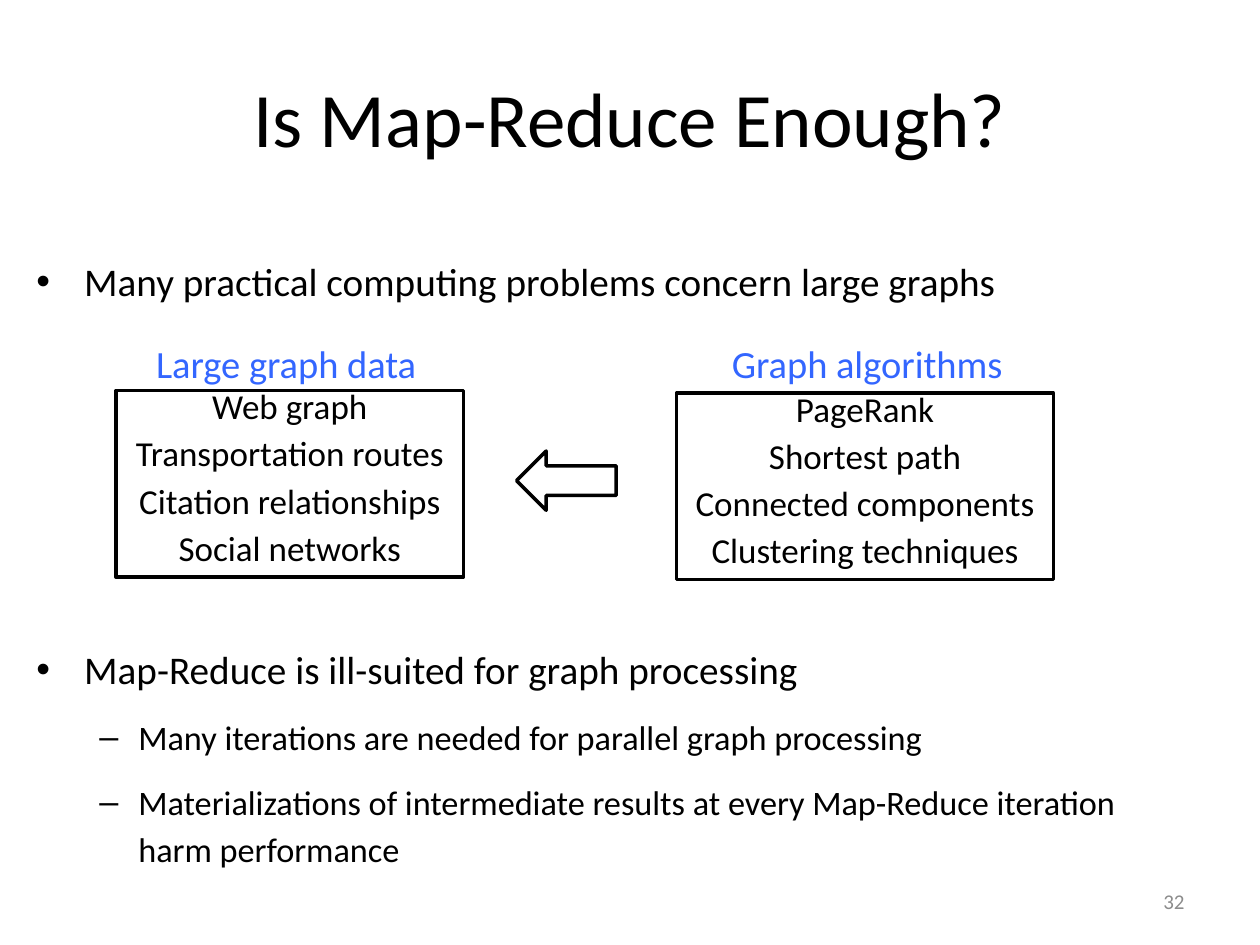
from lxml import etree
from pptx import Presentation
from pptx.dml.color import RGBColor
from pptx.enum.shapes import MSO_SHAPE
from pptx.enum.text import MSO_ANCHOR, PP_ALIGN
from pptx.oxml.ns import qn
from pptx.util import Inches, Pt

RECT, LEFT_ARROW = MSO_SHAPE.RECTANGLE, MSO_SHAPE.LEFT_ARROW
TOP, MIDDLE = MSO_ANCHOR.TOP, MSO_ANCHOR.MIDDLE
LEFT, CENTER, RIGHT = PP_ALIGN.LEFT, PP_ALIGN.CENTER, PP_ALIGN.RIGHT
TITLE_ONLY = 5
FONT = "Calibri"
BLACK, WHITE, BLUE, GRAY = "000000", "FFFFFF", "3366FF", "8C8C8C"


def rgb(value):
    return RGBColor.from_string(value)


def format_paragraph(p, size, color=BLACK, align=LEFT, line=None):
    p.alignment = align
    if line:
        p.line_spacing = Pt(line)
        p.space_before = p.space_after = Pt(5)
    for r in p.runs:
        r.font.name = FONT
        r.font.size = Pt(size)
        r.font.color.rgb = rgb(color)


def set_bullet(p, char, margin, hanging):
    pPr = p._p.get_or_add_pPr()
    pPr.set("marL", str(Inches(margin)))
    pPr.set("indent", str(-Inches(hanging)))
    etree.SubElement(pPr, qn("a:buFont")).set("typeface", "Arial")
    etree.SubElement(pPr, qn("a:buChar")).set("char", char)


def add_text(slide, box, text, size, color, align=LEFT, anchor=TOP, line=None):
    tf = slide.shapes.add_textbox(*map(Inches, box)).text_frame
    tf.word_wrap = True
    tf.vertical_anchor = anchor
    tf.text = text
    for p in tf.paragraphs:
        format_paragraph(p, size, color, align, line)
    return tf


def add_outlined(slide, kind, box):
    sp = slide.shapes.add_shape(kind, *map(Inches, box))
    sp.shadow.inherit = False
    sp.fill.solid()
    sp.fill.fore_color.rgb = rgb(WHITE)
    sp.line.color.rgb = rgb(BLACK)
    sp.line.width = Pt(2)
    return sp


def add_title(slide, box, text):
    title = slide.shapes.title
    title.left, title.top, title.width, title.height = map(Inches, box)
    title.text_frame.text = text
    title.text_frame.vertical_anchor = MIDDLE
    format_paragraph(title.text_frame.paragraphs[0], 44, align=CENTER)


def add_bullets(slide, box, points, diagram_gap):
    """Each point is (level, text); the second main point follows the diagram."""
    tf = add_text(slide, box, "\n".join(text for _, text in points), 22.4, BLACK, line=27)
    for i, (p, (level, _)) in enumerate(zip(tf.paragraphs, points)):
        p.level = level
        if level:
            format_paragraph(p, 19.6, line=27)
            set_bullet(p, "–", 0.81, 0.31)
        else:
            set_bullet(p, "•", 0.38, 0.38)
            if i:
                p.space_before = Pt(diagram_gap)


def add_list_box(slide, box, heading, heading_left, items):
    add_text(slide, (heading_left, 2.64, 2.45, 0.48), heading, 22, BLUE, line=27)
    tf = add_outlined(slide, RECT, box).text_frame
    tf.word_wrap = True
    tf.vertical_anchor = TOP
    tf.text = "\n".join(items)
    for p in tf.paragraphs:
        format_paragraph(p, 20, align=CENTER, line=17)


def main():
    prs = Presentation()
    prs.slide_width, prs.slide_height = Inches(10), Inches(7.5)
    slide = prs.slides.add_slide(prs.slide_layouts[TITLE_ONLY])

    # Title and page number
    add_title(slide, (0.5, 0.3, 9, 1.25), "Is Map-Reduce Enough?")
    add_text(slide, (7.17, 6.95, 2.33, 0.4), "32", 12, GRAY, RIGHT, MIDDLE)

    # Bullets, with room for the diagram after the first
    add_bullets(slide, (0.19, 1.99, 9.63, 5.15), [
        (0, "Many practical computing problems concern large graphs"),
        (0, "Map-Reduce is ill-suited for graph processing"),
        (1, "Many iterations are needed for parallel graph processing"),
        (1, "Materializations of intermediate results at every Map-Reduce iteration"
            "\vharm performance"),
    ], diagram_gap=190)

    # Diagram: algorithms applied to data
    add_list_box(slide, (0.92, 3.1, 2.76, 1.48), "Large graph data", 1.14,
                 ["Web graph", "Transportation routes",
                  "Citation relationships", "Social networks"])
    add_list_box(slide, (5.37, 3.12, 2.99, 1.48), "Graph algorithms", 5.71,
                 ["PageRank", "Shortest path",
                  "Connected components", "Clustering techniques"])
    add_outlined(slide, LEFT_ARROW, (4.1, 3.58, 0.79, 0.47))

    prs.save("out.pptx")


if __name__ == "__main__":
    main()
